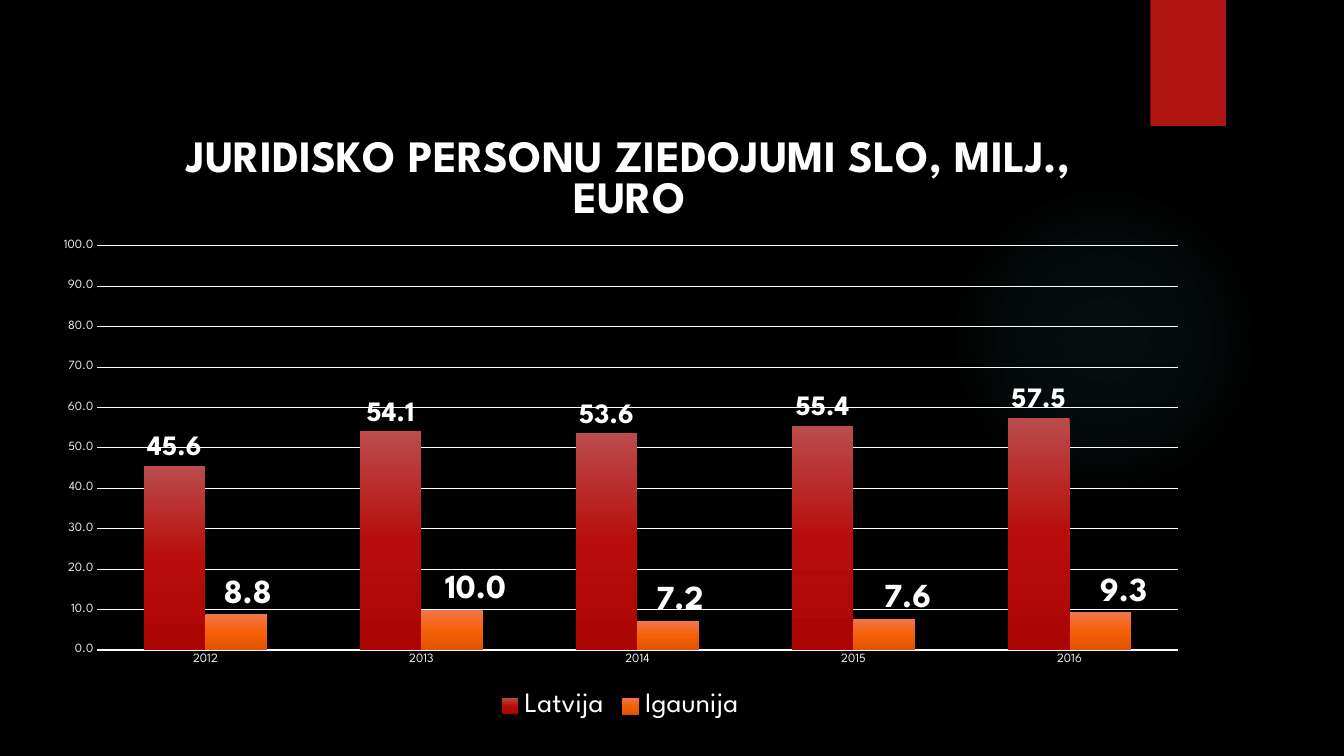
from dataclasses import dataclass

from lxml import etree
from pptx import Presentation
from pptx.chart.data import CategoryChartData
from pptx.dml.color import RGBColor
from pptx.enum.chart import XL_CHART_TYPE, XL_LABEL_POSITION, XL_LEGEND_POSITION, XL_TICK_MARK
from pptx.enum.shapes import MSO_SHAPE
from pptx.oxml import parse_xml
from pptx.oxml.ns import nsdecls, qn
from pptx.util import Inches, Pt

FONT = "League Spartan"
BLACK = RGBColor(0x00, 0x00, 0x00)
WHITE = RGBColor(0xFF, 0xFF, 0xFF)
AXIS_TEXT = RGBColor(0xEB, 0xEB, 0xEB)
GRID = RGBColor(0xFC, 0xFC, 0xFC)
RED = RGBColor(0xB0, 0x15, 0x13)
TEAL = RGBColor(0x50, 0xB9, 0xC1)


@dataclass
class Stop:
    position: int
    color: RGBColor
    opacity: int = 100


@dataclass
class Donations:
    country: str
    values: list[float]
    stops: list[Stop]
    label_size: int
    label_shifts: list[float]


YEARS = ["2012", "2013", "2014", "2015", "2016"]
DONATIONS = [
    Donations("Latvija", [45.6, 54.1, 53.6, 55.4, 57.5],
              [Stop(0, RGBColor(0xBB, 0x4C, 0x4C)), Stop(50, RGBColor(0xB8, 0x0D, 0x0B)),
               Stop(100, RGBColor(0xAA, 0x05, 0x03))], 20, []),
    Donations("Igaunija", [8.8, 10.0, 7.2, 7.6, 9.3],
              [Stop(0, RGBColor(0xF1, 0x76, 0x4C)), Stop(50, RGBColor(0xF5, 0x60, 0x07)),
               Stop(100, RGBColor(0xE0, 0x54, 0x00))], 24, [0.01, 0.02, 0.01, 0.02, 0.02]),
]
GLOW = [Stop(0, TEAL, 7), Stop(36, TEAL, 6), Stop(69, TEAL, 0)]
DOWNWARD = '<a:lin ang="5400000" scaled="0"/>'
RADIAL = '<a:path path="circle"><a:fillToRect l="50000" t="50000" r="50000" b="50000"/></a:path>'


def style_font(font, size: float, color: RGBColor = WHITE, bold: bool = False) -> None:
    font.name = FONT
    font.size = Pt(size)
    font.bold = bold
    font.color.rgb = color


def set_gradient(fill, properties, stops: list[Stop], direction: str) -> None:
    """Fill a shape or series with a gradient of any number of stops."""
    fill.background()
    stop_xml = "".join(
        f'<a:gs pos="{stop.position * 1000}"><a:srgbClr val="{stop.color}">'
        f'<a:alpha val="{stop.opacity * 1000}"/></a:srgbClr></a:gs>' for stop in stops)
    gradient = parse_xml(f'<a:gradFill {nsdecls("a")} rotWithShape="1">'
                         f'<a:gsLst>{stop_xml}</a:gsLst>{direction}</a:gradFill>')
    properties.replace(properties.find(qn("a:noFill")), gradient)


def set_layout(element, index: int, **settings: object) -> None:
    """Give a chart part a manual layout, as fractions of the chart."""
    layout = element.find(qn("c:layout"))
    if layout is None:
        layout = etree.Element(qn("c:layout"))
        element.insert(index, layout)
    manual = etree.SubElement(layout, qn("c:manualLayout"))
    for name, value in settings.items():
        etree.SubElement(manual, qn(f"c:{name}")).set("val", str(value))


def add_decoration(slide, kind: MSO_SHAPE, left: float, top: float, width: float, height: float):
    shape = slide.shapes.add_shape(kind, Inches(left), Inches(top), Inches(width), Inches(height))
    shape.shadow.inherit = False
    shape.line.fill.background()
    return shape


def style_axes(chart) -> None:
    for axis in (chart.category_axis, chart.value_axis):
        axis.major_tick_mark = axis.minor_tick_mark = XL_TICK_MARK.NONE
        style_font(axis.tick_labels.font, 9, AXIS_TEXT)
    value_axis = chart.value_axis
    value_axis.minimum_scale, value_axis.maximum_scale, value_axis.major_unit = 0, 100, 10
    value_axis.tick_labels.number_format = "0.0"
    value_axis.tick_labels.number_format_is_linked = False
    value_axis.format.line.fill.background()
    for line in (chart.category_axis.format.line, value_axis.major_gridlines.format.line):
        line.color.rgb = GRID
        line.width = Pt(0.75)


def style_series(series, donations: Donations) -> None:
    series.invert_if_negative = False
    fill = series.format.fill
    fill.background()
    set_gradient(fill, series._element.find(qn("c:spPr")), donations.stops, DOWNWARD)
    labels = series.data_labels
    labels.show_value = True
    labels.position = XL_LABEL_POSITION.OUTSIDE_END
    style_font(labels.font, donations.label_size, bold=True)
    for index, shift in enumerate(donations.label_shifts):
        label = series.points[index].data_label
        style_font(label.font, donations.label_size, bold=True)
        label.position = XL_LABEL_POSITION.OUTSIDE_END
        element = series._element.findall(".//" + qn("c:dLbl"))[index]
        set_layout(element, 1, x=shift, y=0)


def add_donation_chart(slide) -> None:
    data = CategoryChartData(number_format="0.0")
    data.categories = YEARS
    for donations in DONATIONS:
        data.add_series(donations.country, donations.values)
    chart = slide.shapes.add_chart(XL_CHART_TYPE.COLUMN_CLUSTERED, Inches(0.39), Inches(1.02),
                                   Inches(11.52), Inches(6.17), data).chart
    style_font(chart.font, 10)

    # Title
    chart.has_title = True
    title = chart.chart_title
    paragraph = title.text_frame.paragraphs[0]
    run = paragraph.add_run()
    run.text = "JURIDISKO PERSONU ZIEDOJUMI SLO, MILJ., EURO"
    style_font(run.font, 32, bold=True)
    title.include_in_layout = False
    set_layout(title._element, 1, xMode="edge", yMode="edge", x=0.12, y=0.04)

    # Plot and axes
    plot = chart.plots[0]
    plot.gap_width = 150
    plot.overlap = 0
    plot.vary_by_categories = False
    set_layout(plot._element.getparent(), 0, layoutTarget="inner", xMode="edge", yMode="edge",
               x=0.05, y=0.23, w=0.93, h=0.65)
    style_axes(chart)
    for series, donations in zip(plot.series, DONATIONS):
        style_series(series, donations)

    # Legend
    chart.has_legend = True
    chart.legend.position = XL_LEGEND_POSITION.BOTTOM
    chart.legend.include_in_layout = False
    style_font(chart.legend.font, 20)


def main() -> None:
    presentation = Presentation()
    presentation.slide_width, presentation.slide_height = Inches(13.33), Inches(7.5)
    slide = presentation.slides.add_slide(presentation.slide_layouts[6])
    slide.background.fill.solid()
    slide.background.fill.fore_color.rgb = BLACK

    # Backdrop: soft glow and red tab
    glow = add_decoration(slide, MSO_SHAPE.OVAL, 9.41, 1.83, 3.08, 3.08)
    set_gradient(glow.fill, glow.element.spPr, GLOW, RADIAL)
    tab = add_decoration(slide, MSO_SHAPE.RECTANGLE, 11.41, 0, 0.75, 1.25)
    tab.fill.solid()
    tab.fill.fore_color.rgb = RED

    add_donation_chart(slide)
    presentation.save("out.pptx")


if __name__ == "__main__":
    main()
